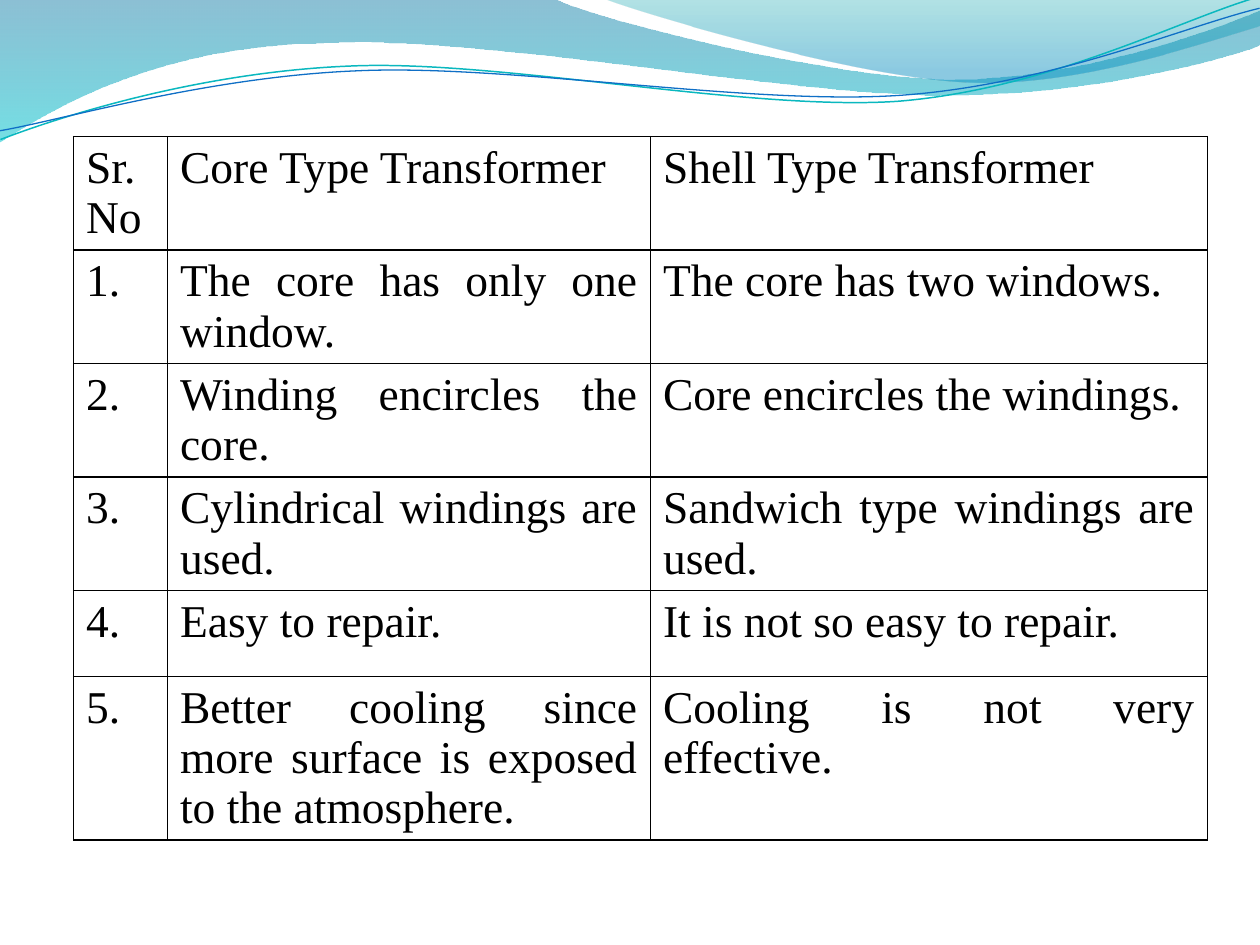
from dataclasses import dataclass

from lxml import etree
from pptx import Presentation
from pptx.dml.color import RGBColor
from pptx.enum.text import PP_ALIGN
from pptx.oxml.ns import qn
from pptx.util import Emu, Pt

JUSTIFY = PP_ALIGN.JUSTIFY
PX = 914400 / 126
FONT = "Times New Roman"
COLORS = {
    "text": "000000",
    "border": "000000",
    "band_top": "0074A1",
    "band_bottom": "00C6CF",
    "fold_top": "00A1A9",
    "fold_bottom": "008BBF",
    "teal_line": "0AB8BF",
    "blue_line": "0F6FC6",
}

Point = tuple[int, int]


@dataclass
class Stop:
    position: float
    color: str
    opacity: int


@dataclass
class Wave:
    """An outline: one point is a straight step, three are a cubic curve."""
    start: Point
    steps: list[tuple[Point, ...]]
    stops: tuple[Stop, ...] = ()
    line: str = ""
    width: float = 0
    rotation: float = 0


WAVES = [
    Wave((0, 0), [
        ((554, -1),),
        ((600, 21), (837, 79), (955, 79)),
        ((1075, 79), (1207, 33), (1260, 11)),
        ((1261, 45),),
        ((1239, 55), (1096, 96), (940, 95)),
        ((784, 95), (481, 35), (324, 43)),
        ((163, 45), (58, 105), (-1, 142)),
    ], stops=(Stop(0, "band_top", 45), Stop(1, "band_bottom", 55))),
    Wave((604, -1), [
        ((641, 14), (859, 78), (969, 82)),
        ((1079, 87), (1211, 40), (1260, 26)),
        ((1260, 0),),
    ], stops=(Stop(0, "fold_top", 30), Stop(0.8, "fold_bottom", 45))),
    Wave((-2, 110), [
        ((58, 90), (199, 52), (350, 53)),
        ((499, 53), (745, 117), (896, 114)),
        ((1048, 109), (1184, 45), (1260, 27)),
    ], line="teal_line", width=0.85, rotation=357.3),
    Wave((-2, 101), [
        ((57, 94), (207, 57), (357, 58)),
        ((509, 58), (750, 112), (902, 108)),
        ((1052, 104), (1188, 52), (1262, 38)),
    ], line="blue_line", width=0.75, rotation=357.3),
]

TABLE_LEFT, TABLE_TOP = Pt(42), Pt(78)
TABLE_HEIGHT = 750
COLUMN_WIDTHS = [94, 483, 557]
ROW_HEIGHTS = [100, 100, 100, 100, 86, 144]
ROWS = [
    ("Sr. No", "Core Type Transformer", "Shell Type Transformer"),
    ("1.", "The core has only one window.", "The core has two windows."),
    ("2.", "Winding encircles the core.", "Core encircles the windings."),
    ("3.", "Cylindrical windings are used.", "Sandwich type windings are used."),
    ("4.", "Easy to repair.", "It is not so easy to repair."),
    ("5.", "Better cooling since more surface is exposed to the atmosphere.",
     "Cooling is not very effective."),
]


def px(length: int) -> Emu:
    return Emu(round(length * PX))


def rgb(name: str) -> RGBColor:
    return RGBColor.from_string(COLORS[name])


def bend_steps(shape, steps: list[tuple[Point, ...]]) -> None:
    """Turn each three straight segments of a curved step into one curve."""
    segments = iter(list(shape.element.iter(qn("a:lnTo"))))
    for step in steps:
        parts = [next(segments) for _ in step]
        if len(parts) == 3:
            curve = etree.Element(qn("a:cubicBezTo"))
            parts[0].addprevious(curve)
            for part in parts:
                curve.append(part[0])
                part.getparent().remove(part)


def fill_gradient(shape, stops: tuple[Stop, ...]) -> None:
    shape.fill.gradient()
    shape.fill.gradient_angle = 270
    for gradient_stop, stop in zip(shape.fill.gradient_stops, stops):
        gradient_stop.color.rgb = rgb(stop.color)
        gradient_stop.position = stop.position
    colors = shape.element.spPr.iter(qn("a:srgbClr"))
    for color, stop in zip(colors, stops):
        etree.SubElement(color, qn("a:alpha"), val=str(stop.opacity * 1000))


def draw_wave(page, wave: Wave) -> None:
    builder = page.shapes.build_freeform(px(wave.start[0]), px(wave.start[1]))
    points = [(px(x), px(y)) for step in wave.steps for x, y in step]
    builder.add_line_segments(points, close=bool(wave.stops))
    shape = builder.convert_to_shape()
    bend_steps(shape, wave.steps)
    shape.rotation = wave.rotation
    shape.shadow.inherit = False
    if wave.stops:
        fill_gradient(shape, wave.stops)
        shape.line.fill.background()
    else:
        shape.fill.background()
        shape.line.color.rgb = rgb(wave.line)
        shape.line.width = Pt(wave.width)


def add_borders(cell, color: str, width: float) -> None:
    properties = cell._tc.get_or_add_tcPr()
    for index, side in enumerate(("lnL", "lnR", "lnT", "lnB")):
        line = etree.Element(qn(f"a:{side}"), w=str(Pt(width)))
        fill = etree.SubElement(line, qn("a:solidFill"))
        etree.SubElement(fill, qn("a:srgbClr"), val=COLORS[color])
        properties.insert(index, line)


def write_cell(cell, text: str, *, size: float, color: str) -> None:
    para = cell.text_frame.paragraphs[0]
    para.alignment = JUSTIFY
    span = para.add_run()
    span.text = text
    span.font.name = FONT
    span.font.size = Pt(size)
    span.font.color.rgb = rgb(color)


def draw_comparison(page) -> None:
    frame = page.shapes.add_table(
        len(ROWS), len(COLUMN_WIDTHS), TABLE_LEFT, TABLE_TOP,
        px(sum(COLUMN_WIDTHS)), px(TABLE_HEIGHT))
    table = frame.table
    table.first_row = table.horz_banding = False
    for column, width in zip(table.columns, COLUMN_WIDTHS):
        column.width = px(width)
    for row, height, texts in zip(table.rows, ROW_HEIGHTS, ROWS):
        row.height = px(height)
        for cell, text in zip(row.cells, texts):
            cell.fill.background()
            add_borders(cell, "border", 1)
            write_cell(cell, text, size=26, color="text")
    frame.height = px(TABLE_HEIGHT)


def main() -> None:
    deck = Presentation()
    deck.slide_width, deck.slide_height = px(1260), px(945)
    page = deck.slides.add_slide(deck.slide_layouts[6])
    for wave in WAVES:
        draw_wave(page, wave)
    draw_comparison(page)
    deck.save("out.pptx")


if __name__ == "__main__":
    main()
